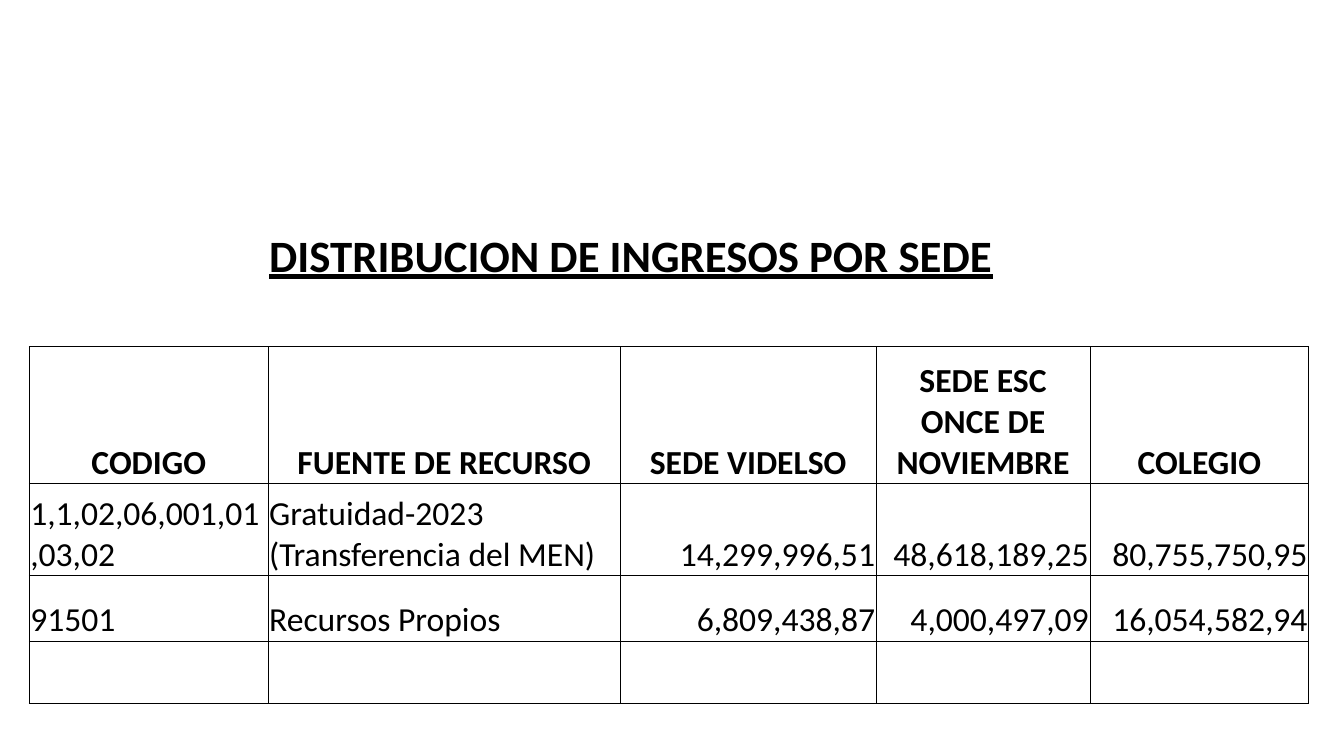
from lxml.etree import SubElement as Sub
from pptx import Presentation
from pptx.dml.color import RGBColor as RGB
from pptx.enum.text import MSO_ANCHOR as Anchor, PP_ALIGN as Align
from pptx.oxml.ns import qn
from pptx.util import Inches, Pt

BLACK = RGB(0, 0, 0)
COLS = [17.78, 26.18, 19.06, 15.9, 16.28]
ROWS = [22, 8.27, 18.13, 12.13, 8.67, 8.27]
HEAD = ["CODIGO", "FUENTE DE RECURSO", "SEDE VIDELSO",
        "SEDE ESC ONCE DE NOVIEMBRE", "COLEGIO"]
BODY = [
    ["1,1,02,06,001,01,03,02", "Gratuidad-2023 (Transferencia del MEN)",
     "14,299,996,51", "48,618,189,25", "80,755,750,95"],
    ["91501", "Recursos Propios",
     "6,809,438,87", "4,000,497,09", "16,054,582,94"],
]
TITLE = {"size": Pt(32), "bold": True, "underline": True}
LABEL = {"size": Pt(24), "bold": True}
PLAIN = {"size": Pt(24), "bold": False}
INSET = {"margin_left": Inches(0.01), "margin_right": Inches(0.01),
         "margin_top": Inches(0.01), "margin_bottom": 0,
         "vertical_anchor": Anchor.BOTTOM}


def apply(item, style):
    for key, val in style.items():
        setattr(item, key, val)


class Page:
    def __init__(self, deck):
        self.wide, self.high = deck.slide_width, deck.slide_height
        self.slide = deck.slides.add_slide(deck.slide_layouts[6])
        self.font = {"name": "Calibri"}
        self.ink = BLACK

    def across(self, share):
        return round(self.wide * share / 100)

    def down(self, share):
        return round(self.high * share / 100)

    def table(self, left, top, cols, rows):
        grid = self.slide.shapes.add_table(
            len(rows), len(cols), self.across(left), self.down(top),
            self.across(sum(cols)), self.down(sum(rows))).table
        apply(grid, {"first_row": False, "horz_banding": False})
        for col, share in zip(grid.columns, cols):
            col.width = self.across(share)
        for row, share in zip(grid.rows, rows):
            row.height = self.down(share)
        return grid

    def frame(self, cell, sides):
        apply(cell, INSET)
        props = cell._tc.get_or_add_tcPr()
        for side in "LRTB":
            line = Sub(props, qn(f"a:ln{side}"), w=str(Pt(0.5)))
            if side in sides:
                fill = Sub(line, qn("a:solidFill"))
                Sub(fill, qn("a:srgbClr"), val=str(self.ink))
            else:
                Sub(line, qn("a:noFill"))
        cell.fill.background()

    def label(self, cell, text, style, align):
        para = cell.text_frame.paragraphs[0]
        para.alignment = align
        run = para.add_run()
        run.text = text
        apply(run.font, {**self.font, **style})
        run.font.color.rgb = self.ink


def main():
    deck = Presentation()
    deck.slide_width, deck.slide_height = Inches(13.33), Inches(7.5)
    page = Page(deck)
    grid = page.table(2.18, 15.6, COLS, ROWS)
    edges = ["", "B"] + ["LRTB"] * 4
    for row, sides in zip(grid.rows, edges):
        for cell in row.cells:
            page.frame(cell, sides)
    title = grid.cell(0, 1)
    title.merge(grid.cell(0, 3))
    page.label(title, "DISTRIBUCION DE INGRESOS POR SEDE", TITLE, Align.LEFT)
    for col, text in enumerate(HEAD):
        page.label(grid.cell(2, col), text, LABEL, Align.CENTER)
    for row, texts in enumerate(BODY, 3):
        for col, text in enumerate(texts):
            align = Align.LEFT if col < 2 else Align.RIGHT
            page.label(grid.cell(row, col), text, PLAIN, align)
    deck.save("out.pptx")


if __name__ == "__main__":
    main()
